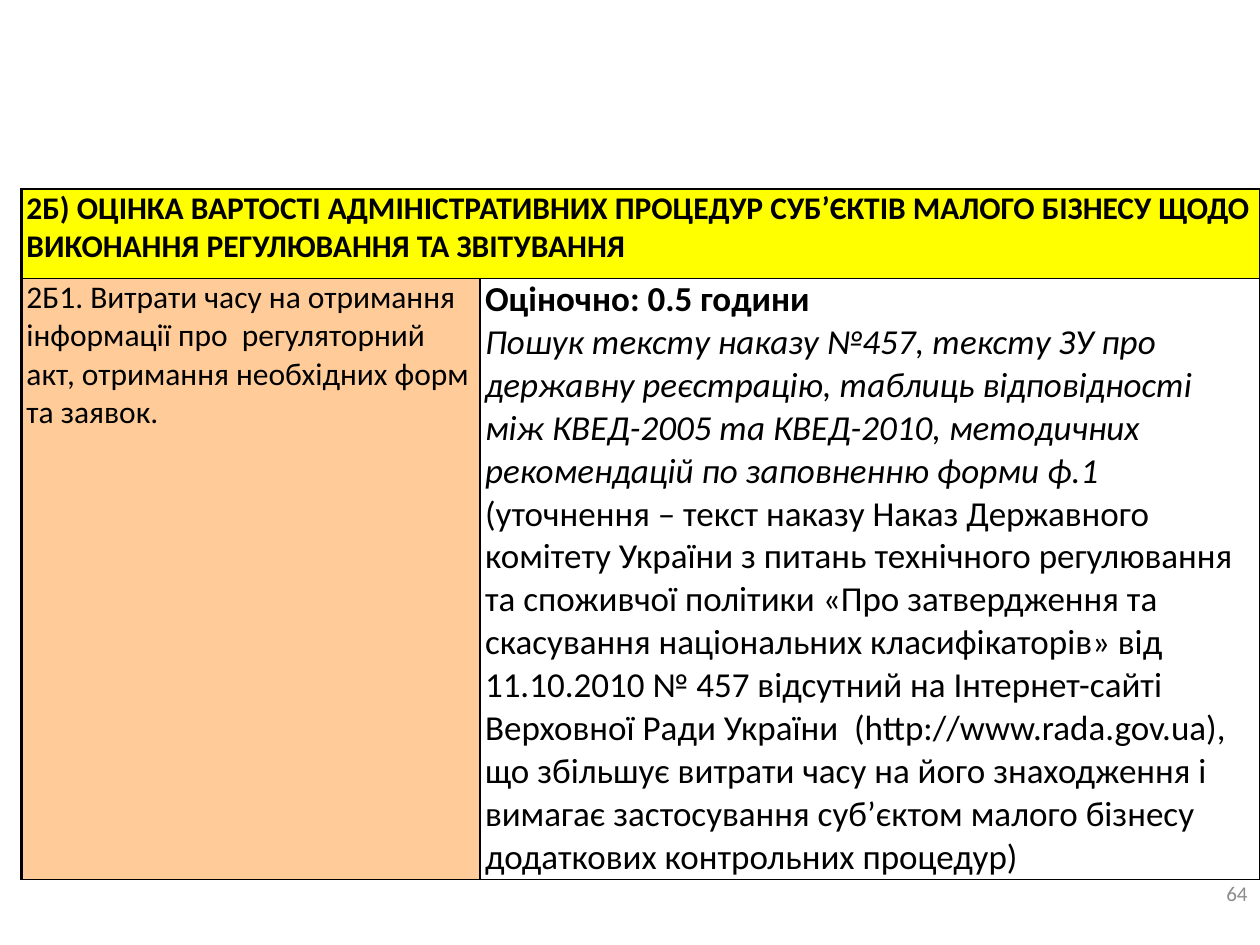
from lxml import etree
from pptx import Presentation
from pptx.dml.color import RGBColor
from pptx.enum.text import MSO_ANCHOR, PP_ALIGN
from pptx.oxml.ns import qn
from pptx.util import Inches, Pt

RIGHT = PP_ALIGN.RIGHT
MIDDLE = MSO_ANCHOR.MIDDLE
FONT = "Calibri"
BLACK, GREY, YELLOW, PEACH = "000000", "8C8C8C", "FFFF00", "FFCC99"

HEADING = (
    "2Б) ОЦІНКА ВАРТОСТІ АДМІНІСТРАТИВНИХ ПРОЦЕДУР СУБ’ЄКТІВ МАЛОГО БІЗНЕСУ "
    "ЩОДО ВИКОНАННЯ РЕГУЛЮВАННЯ ТА ЗВІТУВАННЯ"
)
COST_ITEM = (
    "2Б1. Витрати часу на отримання інформації про  регуляторний акт, "
    "отримання необхідних форм та заявок."
)
ESTIMATE = "Оціночно: 0.5 години"
SEARCH = (
    "Пошук тексту наказу №457, тексту ЗУ про державну реєстрацію, таблиць "
    "відповідності між КВЕД-2005 та КВЕД-2010, методичних рекомендацій по "
    "заповненню форми ф.1"
)
CLARIFICATION = (
    "(уточнення – текст наказу Наказ Державного комітету України з питань "
    "технічного регулювання та споживчої політики «Про затвердження та "
    "скасування національних класифікаторів» від 11.10.2010 № 457 відсутний на "
    "Інтернет-сайті Верховної Ради України  (http://www.rada.gov.ua), що "
    "збільшує витрати часу на його знаходження і вимагає застосування "
    "суб’єктом малого бізнесу додаткових контрольних процедур)"
)


def color(value):
    """Turn a hex string into a colour."""
    return RGBColor.from_string(value)


def format_runs(paragraph, size, text_color=BLACK, bold=False, italic=False):
    """Format every run of a paragraph."""
    for run in paragraph.runs:
        font = run.font
        font.name, font.size = FONT, Pt(size)
        font.bold, font.italic = bold, italic
        font.color.rgb = color(text_color)


def set_borders(cell, widths):
    """Draw black cell borders with widths for left, right, top and bottom."""
    properties = cell._tc.get_or_add_tcPr()
    for index, (side, width) in enumerate(zip("LRTB", widths)):
        line = etree.Element(qn(f"a:ln{side}"), w=str(Pt(width)))
        fill = etree.SubElement(line, qn("a:solidFill"))
        etree.SubElement(fill, qn("a:srgbClr"), val=BLACK)
        properties.insert(index, line)


def fill_cell(cell, paragraphs, size, fill, borders):
    """Write (text, bold, italic) paragraphs into a cell and style it."""
    cell.margin_left = cell.margin_right = Inches(0.04)
    cell.margin_top = cell.margin_bottom = 0
    if fill:
        cell.fill.solid()
        cell.fill.fore_color.rgb = color(fill)
    else:
        cell.fill.background()
    cell.text_frame.text = "\n".join(text for text, _, _ in paragraphs)
    for paragraph, (_, bold, italic) in zip(cell.text_frame.paragraphs, paragraphs):
        format_runs(paragraph, size, bold=bold, italic=italic)
    set_borders(cell, borders)


def add_cost_table(slide, left, top, width, height):
    """Add the cost table: a heading row above an item and its estimate."""
    table = slide.shapes.add_table(2, 2, left, top, width, height).table
    item_width, heading_height = Inches(3.64), Inches(0.71)
    table.columns[0].width = item_width
    table.columns[1].width = width - item_width
    table.rows[0].height = heading_height
    table.rows[1].height = height - heading_height

    heading_borders = (1.5, 1.5, 1.5, 1)
    fill_cell(table.cell(0, 0), [(HEADING, True, False)], 18, YELLOW, heading_borders)
    set_borders(table.cell(0, 1), heading_borders)
    table.cell(0, 0).merge(table.cell(0, 1))
    fill_cell(table.cell(1, 0), [(COST_ITEM, False, False)], 18, PEACH, (1.5, 1, 1, 1))
    estimate = [
        (ESTIMATE, True, False),
        (SEARCH, False, True),
        (CLARIFICATION, False, False),
    ]
    fill_cell(table.cell(1, 1), estimate, 20, None, (1, 1.5, 1, 1))


def add_page_number(slide, left, top, width, height):
    """Add the page number at the right of its box."""
    text_frame = slide.shapes.add_textbox(left, top, width, height).text_frame
    text_frame.word_wrap = True
    text_frame.vertical_anchor = MIDDLE
    text_frame.text = "64"
    paragraph = text_frame.paragraphs[0]
    paragraph.alignment = RIGHT
    format_runs(paragraph, 12, GREY)


def main():
    """Build and save the presentation."""
    presentation = Presentation()
    presentation.slide_width, presentation.slide_height = Inches(10), Inches(7.5)
    slide = presentation.slides.add_slide(presentation.slide_layouts[6])
    add_page_number(slide, Inches(7.67), Inches(6.83), Inches(2.33), Inches(0.52))
    add_cost_table(slide, Inches(0.17), Inches(1.5), Inches(9.83), Inches(5.48))
    presentation.save("out.pptx")


if __name__ == "__main__":
    main()
